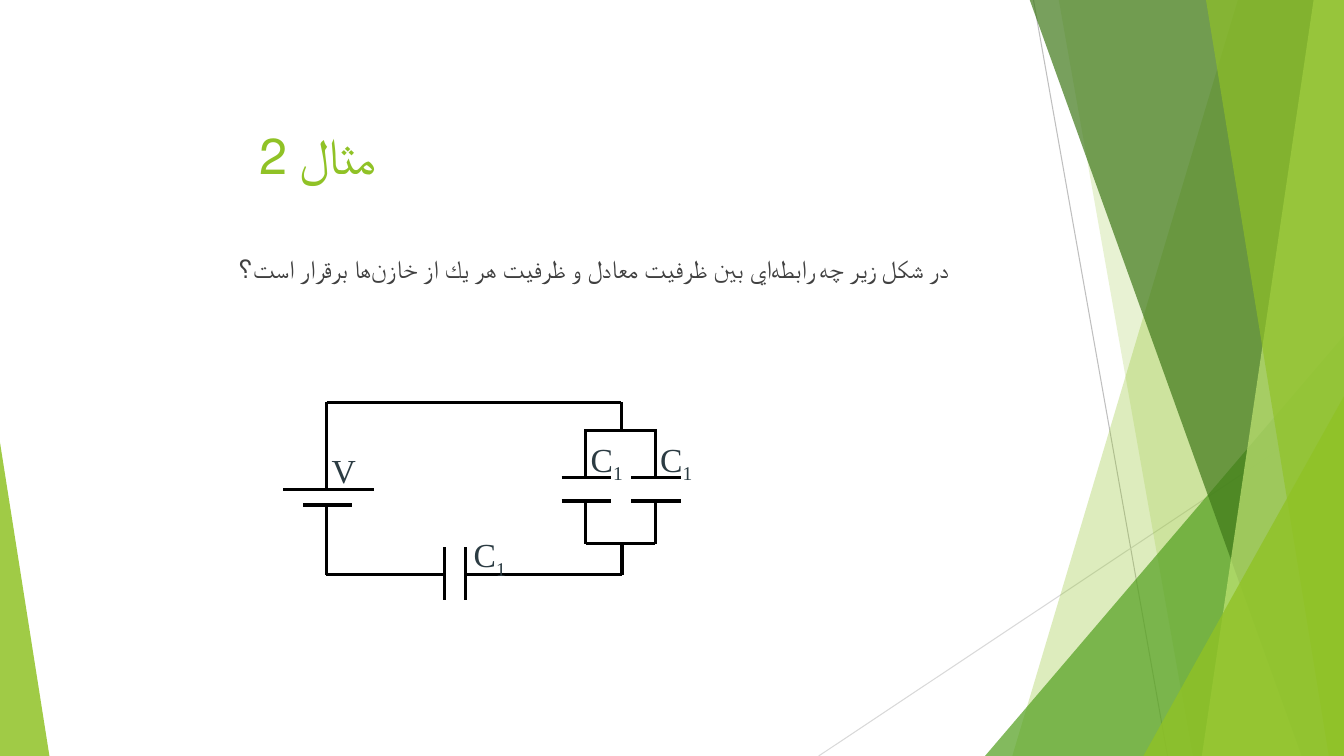
from dataclasses import dataclass

from lxml import etree
from pptx import Presentation
from pptx.dml.color import RGBColor
from pptx.enum.shapes import MSO_CONNECTOR, MSO_SHAPE
from pptx.enum.text import MSO_ANCHOR, MSO_AUTO_SIZE, PP_ALIGN
from pptx.oxml.ns import qn
from pptx.util import Pt

PX = 9144  # EMU in one px, 100 px to the inch
SLIDE_WIDTH, SLIDE_HEIGHT = 1333, 750
STRAIGHT = MSO_CONNECTOR.STRAIGHT
TRIANGLE = MSO_SHAPE.ISOSCELES_TRIANGLE
TOP = MSO_ANCHOR.TOP
NO_AUTOFIT, GROW = MSO_AUTO_SIZE.NONE, MSO_AUTO_SIZE.SHAPE_TO_FIT_TEXT
LEFT, JUSTIFY = PP_ALIGN.LEFT, PP_ALIGN.JUSTIFY
NON_JOINER = chr(0x200C)  # Persian half-space
QUESTION = (f"در شكل زير چه رابطه{NON_JOINER}اي بين ظرفيت معادل و ظرفيت "
            f"هر يك از خازن{NON_JOINER}ها برقرار است؟")


@dataclass(frozen=True)
class Theme:
    lime: str = "90C226"
    pale_lime: str = "C0E474"
    green: str = "54A021"
    dark_green: str = "3F7819"
    grey: str = "BFBFBF"
    light_grey: str = "D9D9D9"
    body: str = "404040"
    label: str = "2C3C43"
    wire: str = "000000"
    text_font: str = "Lato"
    label_font: str = "Times New Roman"
    title_size: int = 36
    body_size: int = 18
    label_size: int = 24
    hairline: float = 0.75
    wire_width: float = 2.25


class SlideBuilder:
    def __init__(self, slide, theme):
        self.slide = slide
        self.theme = theme
        self.shapes = slide.shapes

    def start_group(self):
        """Send the elements that follow into a new group."""
        self.shapes = self.slide.shapes.add_group_shape().shapes

    def line(self, x1, y1, x2, y2, color, width):
        connector = self.shapes.add_connector(
            STRAIGHT, *(value * PX for value in (x1, y1, x2, y2)))
        connector.line.color.rgb = RGBColor.from_string(color)
        connector.line.width = Pt(width)
        etree.SubElement(connector.element.spPr, qn("a:effectLst"))

    def wire(self, x1, y1, x2, y2):
        self.line(x1, y1, x2, y2, self.theme.wire, self.theme.wire_width)

    def paint(self, shape, color, opacity):
        """Fill without outline or shadow; opacity is in percent."""
        shape.shadow.inherit = False
        shape.line.fill.background()
        shape.fill.solid()
        shape.fill.fore_color.rgb = RGBColor.from_string(color)
        color_element = shape.element.spPr.find(".//" + qn("a:srgbClr"))
        etree.SubElement(color_element, qn("a:alpha"), val=str(opacity * 1000))

    def panel(self, top_x, bottom_x, color, opacity):
        """Full-height facet between a slanted edge and the slide's right edge."""
        builder = self.shapes.build_freeform(top_x * PX, -PX)
        corners = [(SLIDE_WIDTH, -1), (SLIDE_WIDTH, SLIDE_HEIGHT),
                   (bottom_x, SLIDE_HEIGHT)]
        builder.add_line_segments([(x * PX, y * PX) for x, y in corners])
        self.paint(builder.convert_to_shape(), color, opacity)

    def triangle(self, left, top, width, apex, color, opacity):
        """Triangle standing on the slide's bottom edge; apex runs from 0 to 1."""
        shape = self.shapes.add_shape(
            TRIANGLE, left * PX, top * PX, width * PX,
            (SLIDE_HEIGHT - top) * PX)
        shape.adjustments[0] = apex
        self.paint(shape, color, opacity)

    def format_run(self, run, font, size, color):
        run.font.name = font
        run.font.size = Pt(size)
        run.font.color.rgb = RGBColor.from_string(color)

    def placeholder(self, shape, box, text, size, color, alignment):
        """Fill a placeholder, place it and bring it to the front."""
        shape.element.getparent().append(shape.element)
        shape.left, shape.top, shape.width, shape.height = (
            value * PX for value in box)
        frame = shape.text_frame
        frame.text = text
        frame.word_wrap = True
        frame.auto_size = NO_AUTOFIT
        frame.vertical_anchor = TOP
        paragraph = frame.paragraphs[0]
        paragraph.alignment = alignment
        self.format_run(paragraph.runs[0], self.theme.text_font, size, color)
        return paragraph

    def title(self, box, text):
        self.placeholder(self.slide.shapes.title, box, text,
                         self.theme.title_size, self.theme.lime, LEFT)

    def body(self, box, text):
        paragraph = self.placeholder(
            self.slide.placeholders[1], box, text,
            self.theme.body_size, self.theme.body, JUSTIFY)
        paragraph.space_before = Pt(10)
        properties = paragraph._p.get_or_add_pPr()
        properties.set("marL", "0")
        properties.set("indent", "0")
        etree.SubElement(properties, qn("a:buNone"))

    def label(self, left, top, width, height, symbol, subscript=""):
        box = self.shapes.add_textbox(
            left * PX, top * PX, width * PX, height * PX)
        frame = box.text_frame
        frame.word_wrap = False
        frame.auto_size = GROW
        paragraph = frame.paragraphs[0]
        for text in filter(None, (symbol, subscript)):
            run = paragraph.add_run()
            run.text = text
            self.format_run(run, self.theme.label_font,
                            self.theme.label_size, self.theme.label)
        if subscript:
            run._r.get_or_add_rPr().set("baseline", "-25000")


def draw_facets(builder):
    theme = builder.theme
    builder.start_group()
    builder.line(1025, 0, 1158, 750, theme.grey, theme.hairline)
    builder.line(1333, 403, 812, 750, theme.light_grey, theme.hairline)
    builder.panel(1228, 1004, theme.lime, 30)
    builder.panel(1050, 1183, theme.lime, 20)
    builder.triangle(977, 333, 356, 1, theme.green, 72)
    builder.panel(1021, 1291, theme.dark_green, 70)
    builder.panel(1303, 1192, theme.pale_lime, 70)
    builder.panel(1196, 1318, theme.lime, 65)
    builder.triangle(1134, 393, 199, 1, theme.lime, 80)
    builder.triangle(0, 439, 49, 0, theme.lime, 85)


def draw_circuit(builder):
    builder.start_group()
    # Battery and the left side of the loop
    builder.wire(324, 399, 324, 486)
    builder.wire(281, 486, 371, 486)
    builder.wire(301, 501, 349, 501)
    builder.wire(324, 501, 324, 570)
    # Top side, and the right side down to and up from the branches
    builder.wire(324, 399, 616, 399)
    builder.wire(616, 399, 616, 426)
    builder.wire(617, 539, 617, 570)
    # Series capacitor in the bottom side
    builder.wire(323, 570, 441, 570)
    for plate_x in (441, 462):
        builder.wire(plate_x, 543, plate_x, 595)
    builder.wire(462, 570, 617, 570)
    # Two capacitors in parallel
    for rail_y in (427, 539):
        builder.wire(581, rail_y, 650, rail_y)
    for branch_x in (581, 650):
        builder.wire(branch_x, 426, branch_x, 474)
        builder.wire(branch_x, 497, branch_x, 540)
        for plate_y in (474, 497):
            builder.wire(branch_x - 24, plate_y, branch_x + 25, plate_y)

    builder.label(319, 441, 44, 50, "V")
    for left, top in ((576, 430), (645, 430), (460, 525)):
        builder.label(left, top, 54, 51, "C", "1")


def main():
    presentation = Presentation()
    presentation.slide_width = SLIDE_WIDTH * PX
    presentation.slide_height = SLIDE_HEIGHT * PX
    slide = presentation.slides.add_slide(presentation.slide_layouts[1])
    builder = SlideBuilder(slide, Theme())
    draw_facets(builder)
    builder.title((247, 118, 875, 92), "مثال 2")
    builder.body((227, 246, 882, 115), QUESTION)
    draw_circuit(builder)
    presentation.save("out.pptx")


if __name__ == "__main__":
    main()
